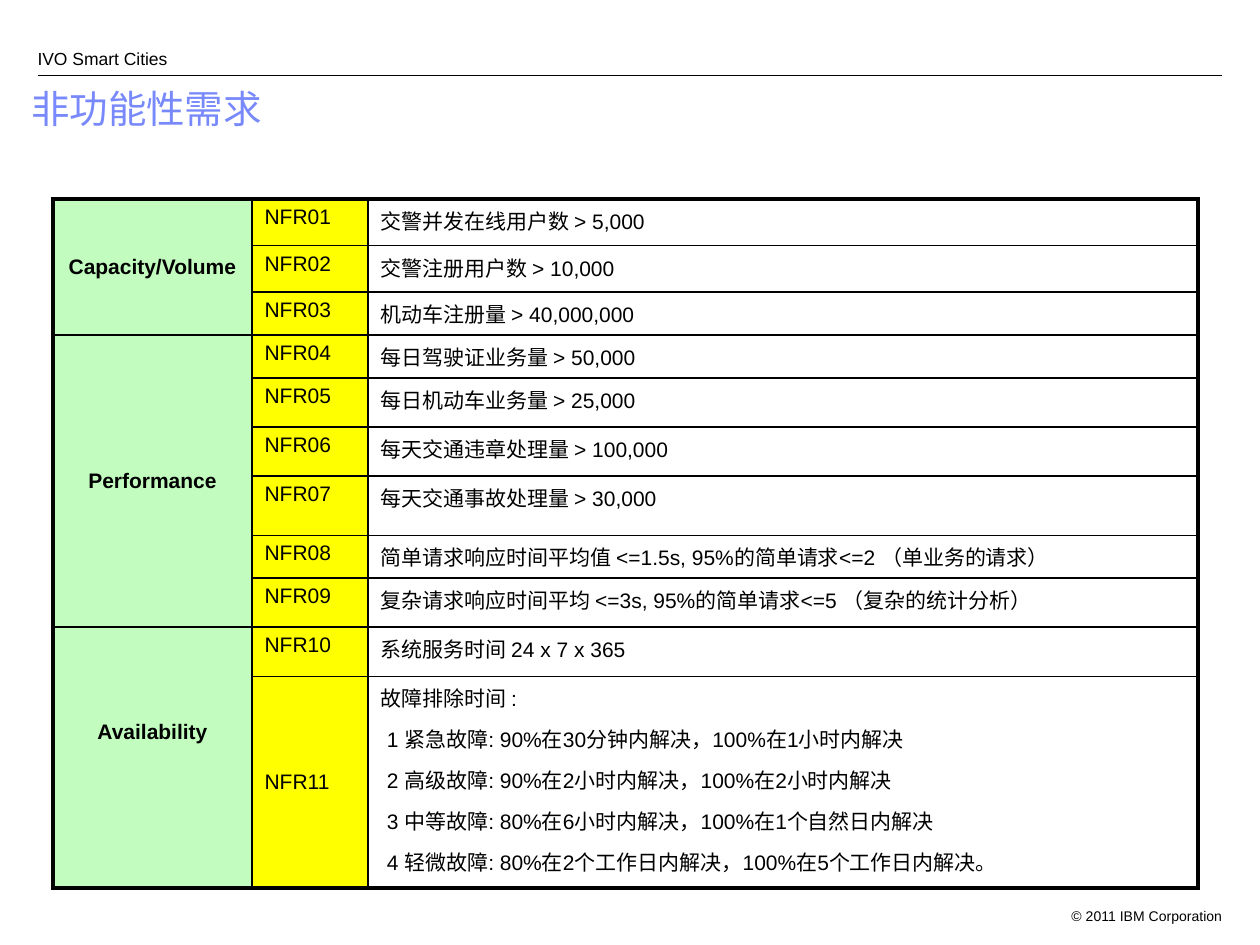
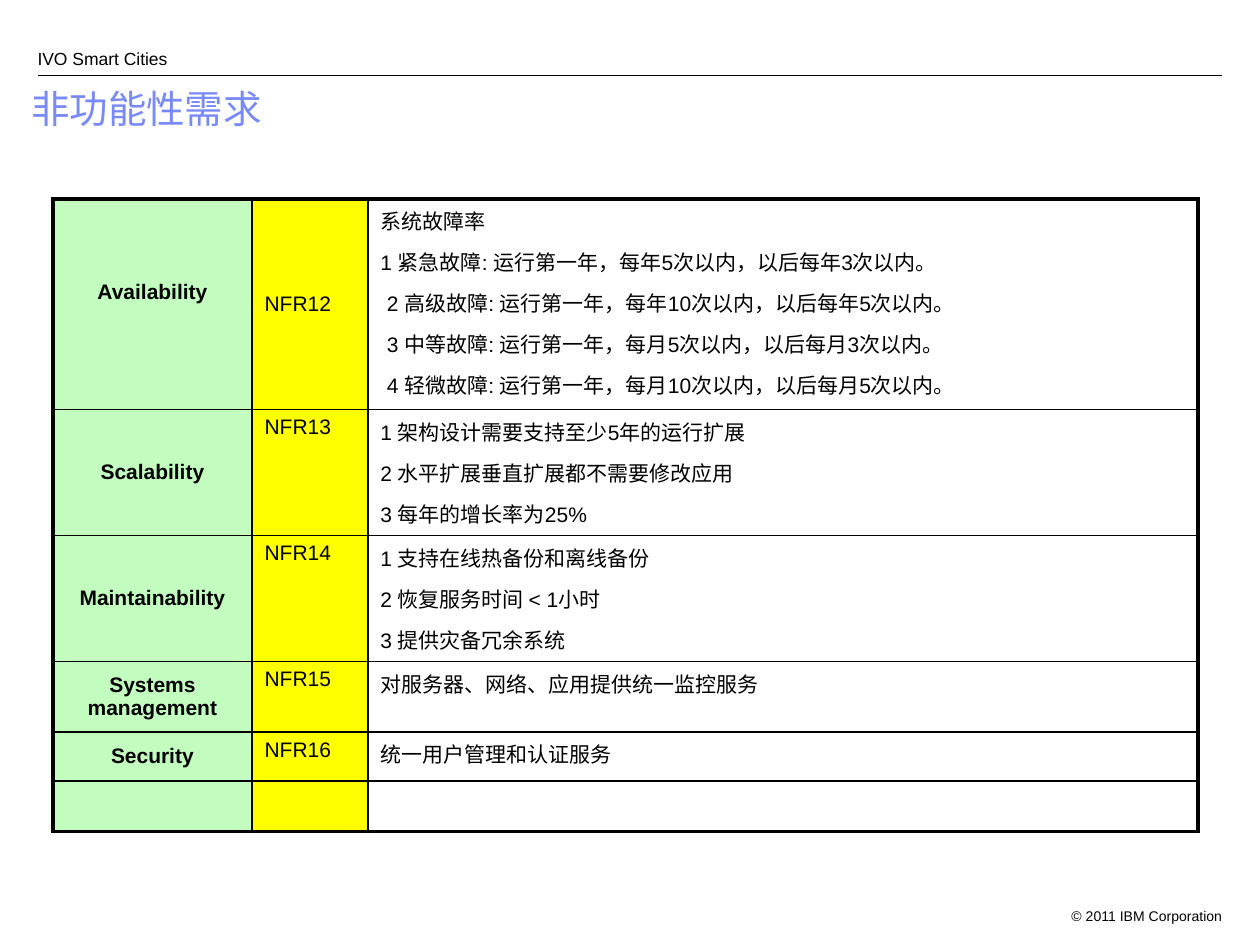
import pptx
import pptx.util
import pptx.dml.color
import pptx.enum.shapes
import pptx.enum.text
import pptx.oxml
import pptx.oxml.ns
from pptx.util import Inches

HUES = {"ink": "000000", "title": "7889FB", "label": "C2FDBF", "code": "FFFF00"}
FONT = "Arial"
COLS = (1.58, 0.92, 6.59)
THIN, THICK = 1, 2.25
ALIGN = pptx.enum.text.PP_ALIGN
ANCHOR = pptx.enum.text.MSO_ANCHOR

# Each group: label, extra bottom margin, rows of (code, height, lines).
# A leading space in a line stands for a small indent.
LOADS = [
    ("Capacity/Volume", 0, [
        ("NFR01", 0.37, ["交警并发在线用户数 > 5,000"]),
        ("NFR02", 0.37, ["交警注册用户数 > 10,000"]),
        ("NFR03", 0.34, ["机动车注册量 > 40,000,000"]),
    ]),
    ("Performance", 0, [
        ("NFR04", 0.34, ["每日驾驶证业务量 > 50,000"]),
        ("NFR05", 0.39, ["每日机动车业务量 > 25,000"]),
        ("NFR06", 0.39, ["每天交通违章处理量 > 100,000"]),
        ("NFR07", 0.47, ["每天交通事故处理量 > 30,000"]),
        ("NFR08", 0.34, ["简单请求响应时间平均值 <=1.5s, 95%的简单请求<=2 （单业务的请求）"]),
        ("NFR09", 0.39, ["复杂请求响应时间平均 <=3s, 95%的简单请求<=5 （复杂的统计分析）"]),
    ]),
    ("Availability", 0.4, [
        ("NFR10", 0.39, ["系统服务时间 24 x 7 x 365"]),
        ("NFR11", 1.68, [
            "故障排除时间 :",
            " 1 紧急故障: 90%在30分钟内解决，100%在1小时内解决",
            " 2 高级故障: 90%在2小时内解决，100%在2小时内解决",
            " 3 中等故障: 80%在6小时内解决，100%在1个自然日内解决",
            " 4 轻微故障: 80%在2个工作日内解决，100%在5个工作日内解决。",
        ]),
    ]),
]
CARE = [
    ("Availability", 0.2, [
        ("NFR12", 1.67, [
            "系统故障率",
            "1 紧急故障: 运行第一年，每年5次以内，以后每年3次以内。",
            " 2 高级故障: 运行第一年，每年10次以内，以后每年5次以内。",
            " 3 中等故障: 运行第一年，每月5次以内，以后每月3次以内。",
            " 4 轻微故障: 运行第一年，每月10次以内，以后每月5次以内。",
        ]),
    ]),
    ("Scalability", 0, [
        ("NFR13", 1, ["1 架构设计需要支持至少5年的运行扩展", "2 水平扩展垂直扩展都不需要修改应用", "3 每年的增长率为25%"]),
    ]),
    ("Maintainability", 0, [
        ("NFR14", 1, ["1 支持在线热备份和离线备份", "2 恢复服务时间 < 1小时", "3 提供灾备冗余系统"]),
    ]),
    ("Systems management", 0, [("NFR15", 0.56, ["对服务器、网络、应用提供统一监控服务"])]),
    ("Security", 0, [("NFR16", 0.39, ["统一用户管理和认证服务"])]),
    ("", 0, [("", 0.39, [])]),
]


def color(name):
    return pptx.dml.color.RGBColor.from_string(HUES[name])


class Deck:
    def __init__(self):
        self.prs = pptx.Presentation()
        self.prs.slide_width, self.prs.slide_height = Inches(10), Inches(7.5)
        self.slide = None

    def page(self, title):
        self.slide = self.prs.slides.add_slide(self.prs.slide_layouts[6])
        self.rule(0.3, 9.7, 0.6)
        self.text("© 2011 IBM Corporation", (8.3, 7.15, 1.5, 0.2), 8, align=ALIGN.RIGHT)
        self.text("IVO Smart Cities", (0.2, 0.15, 4.7, 0.4), 10, anchor=ANCHOR.BOTTOM, pad=0)
        self.text(title, (0.15, 0.67, 9.02, 0.55), 22, "title", lead=0.9)

    def style(self, par, size, hue="ink", bold=False):
        for run in par.runs:
            run.font.name, run.font.size = FONT, pptx.util.Pt(size)
            run.font.bold, run.font.color.rgb = bold, color(hue)

    def rule(self, left, right, top):
        kind = pptx.enum.shapes.MSO_CONNECTOR.STRAIGHT
        line = self.slide.shapes.add_connector(kind, Inches(left), Inches(top), Inches(right), Inches(top))
        line.line.color.rgb, line.line.width = color("ink"), pptx.util.Pt(0.75)
        line._element.spPr.append(pptx.oxml.parse_xml(f'<a:effectLst {pptx.oxml.ns.nsdecls("a")}/>'))

    def text(self, words, box, size, hue="ink", align=ALIGN.LEFT, anchor=ANCHOR.TOP, pad=0.05, lead=None):
        frame = self.slide.shapes.add_textbox(*map(Inches, box)).text_frame
        frame.word_wrap, frame.vertical_anchor = True, anchor
        frame.margin_top = frame.margin_bottom = Inches(pad)
        frame.text = words
        par = frame.paragraphs[0]
        par.alignment, par.line_spacing = align, lead
        self.style(par, size, hue)

    def edges(self, cell, widths):
        props = cell._tc.get_or_add_tcPr()
        for side, width in zip("LRTB", widths):
            props.append(pptx.oxml.parse_xml(
                f'<a:ln{side} {pptx.oxml.ns.nsdecls("a")} w="{pptx.util.Pt(width)}"><a:solidFill>'
                f'<a:srgbClr val="{HUES["ink"]}"/></a:solidFill></a:ln{side}>'))

    def cell(self, cell, lines, fill=None, bold=False, align=ALIGN.LEFT, middle=False):
        if fill:
            cell.fill.solid()
            cell.fill.fore_color.rgb = color(fill)
        else:
            cell.fill.background()
        cell.vertical_anchor = ANCHOR.MIDDLE if middle else ANCHOR.TOP
        cell.text_frame.text = "\n".join(line.lstrip() for line in lines)
        for i, (par, line) in enumerate(zip(cell.text_frame.paragraphs, lines)):
            par.alignment = align
            par.space_before = pptx.util.Pt(4.2 if i else 0)
            par.space_after = pptx.util.Pt(1.8)
            if line.startswith(" "):
                par._p.get_or_add_pPr().set("marL", str(Inches(0.05)))
            self.style(par, 12, bold=bold)

    def table(self, groups, left, top):
        rows = [row for _, _, part in groups for row in part]
        count, last = len(rows), len(COLS) - 1
        high = sum(row[1] for row in rows)
        table = self.slide.shapes.add_table(
            count, len(COLS), Inches(left), Inches(top), Inches(sum(COLS)), Inches(high)).table
        table.first_row = table.horz_banding = False
        for col, width in zip(table.columns, COLS):
            col.width = Inches(width)
        first = 0
        for label, drop, part in groups:
            end = first + len(part)
            for r, (code, height, lines) in enumerate(part, first):
                table.rows[r].height = Inches(height)
                for c in range(len(COLS)):
                    stop = end if c == 0 else r + 1
                    outer = (c == 0, c == last, r == 0, stop == count)
                    self.edges(table.cell(r, c), [THICK if out else THIN for out in outer])
                self.cell(table.cell(r, 1), [code], "code", middle=len(lines) > 3)
                self.cell(table.cell(r, 2), lines)
            head = table.cell(first, 0)
            if len(part) > 1:
                head.merge(table.cell(end - 1, 0))
            self.cell(head, [label], "label", True, ALIGN.CENTER, True)
            head.margin_bottom = Inches(0.05 + drop)
            first = end


def main():
    deck = Deck()
    for groups in (LOADS, CARE):
        deck.page("非功能性需求")
        deck.table(groups, 0.42, 1.58)
    deck.prs.save("out.pptx")


if __name__ == "__main__":
    main()
